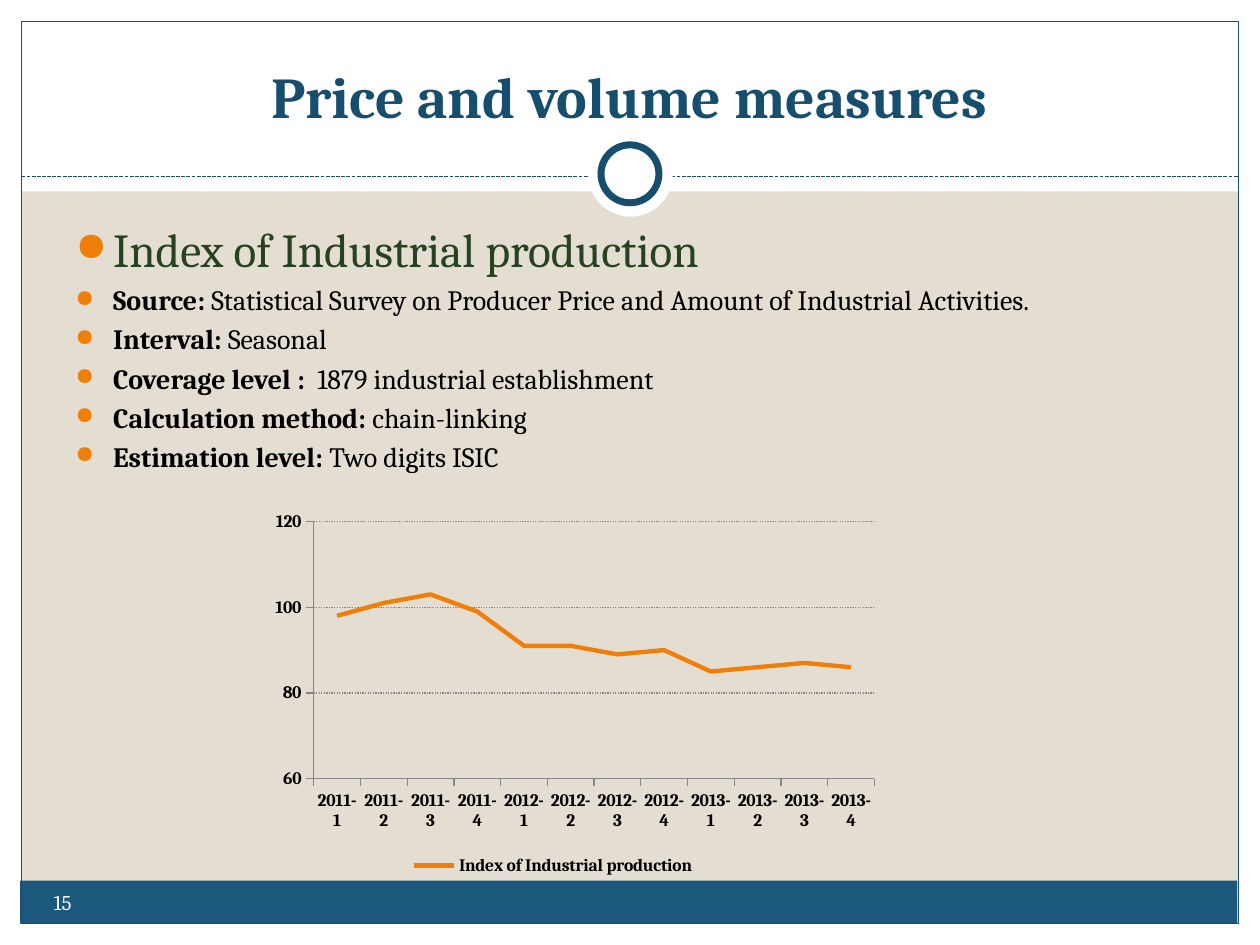
from lxml import etree
from pptx import Presentation
from pptx.chart.data import CategoryChartData
from pptx.dml.color import RGBColor
from pptx.enum.chart import XL_CHART_TYPE, XL_LEGEND_POSITION, XL_TICK_MARK
from pptx.enum.dml import MSO_LINE
from pptx.enum.shapes import MSO_CONNECTOR, MSO_SHAPE
from pptx.enum.text import MSO_ANCHOR, PP_ALIGN
from pptx.oxml import parse_xml
from pptx.oxml.ns import nsdecls, qn
from pptx.util import Inches, Pt

COLORS = {
    "sand": "E3DED1", "white": "FFFFFF", "navy": "184E6D", "footer": "1B587C",
    "orange": "F07F09", "green": "274221", "black": "000000", "grey": "868686",
}
FONT = "Cambria"


def rgb(name):
    return RGBColor.from_string(COLORS[name])


class SlideBuilder:
    def __init__(self, slide):
        self.slide = slide
        fill = slide.background.fill
        fill.solid()
        fill.fore_color.rgb = rgb("sand")

    def style_font(self, font, size, color, bold=False):
        font.name, font.size, font.bold = FONT, Pt(size), bold
        font.color.rgb = rgb(color)

    def style_line(self, line, color, width, dash=None):
        line.color.rgb = rgb(color)
        line.width = Pt(width)
        if dash:
            line.dash_style = dash

    def shape(self, kind, box, fill=None, line=None, width=0.75):
        shape = self.slide.shapes.add_shape(kind, *map(Inches, box))
        shape.shadow.inherit = False
        if fill:
            shape.fill.solid()
            shape.fill.fore_color.rgb = rgb(fill)
        else:
            shape.fill.background()
        if line:
            self.style_line(shape.line, line, width)
        else:
            shape.line.fill.background()

    def rule(self, left, right, y):
        rule = self.slide.shapes.add_connector(
            MSO_CONNECTOR.STRAIGHT, Inches(left), Inches(y), Inches(right), Inches(y))
        self.style_line(rule.line, "navy", 0.75, MSO_LINE.SQUARE_DOT)
        etree.SubElement(rule._element.spPr, qn("a:effectLst"))

    def text_frame(self, box, anchor=MSO_ANCHOR.TOP):
        frame = self.slide.shapes.add_textbox(*map(Inches, box)).text_frame
        frame.word_wrap = True
        frame.vertical_anchor = anchor
        return frame

    def text(self, box, words, size, color, bold=False,
             align=PP_ALIGN.LEFT, anchor=MSO_ANCHOR.TOP):
        paragraph = self.text_frame(box, anchor).paragraphs[0]
        paragraph.text, paragraph.alignment = words, align
        self.style_font(paragraph.font, size, color, bold)

    def bullet(self, paragraph, size, color, words, label=""):
        paragraph.space_before = Pt(0.2 * size)
        self.style_font(paragraph.font, size, color)
        if label:
            paragraph.add_run().text = label
            paragraph.runs[0].font.bold = True
        paragraph.add_run().text = words
        props = paragraph._p.get_or_add_pPr()
        props.set("marL", str(Inches(0.3)))
        props.set("indent", str(Inches(-0.3)))
        marks = (
            f'<a:buClr {nsdecls("a")}><a:srgbClr val="{COLORS["orange"]}"/></a:buClr>',
            f'<a:buSzPct {nsdecls("a")} val="85000"/>',
            f'<a:buChar {nsdecls("a")} char="●"/>',
        )
        default_font = props.find(qn("a:defRPr"))
        for mark in marks:
            default_font.addprevious(parse_xml(mark))

    def place(self, parent, box, inner=False):
        """Set a manual chart layout, given as fractions of the chart."""
        for old in parent.findall(qn("c:layout")):
            parent.remove(old)
        target = '<c:layoutTarget val="inner"/>' if inner else ""
        modes = '<c:xMode val="edge"/><c:yMode val="edge"/>'
        sizes = "".join(f'<c:{key} val="{value}"/>' for key, value in zip("xywh", box))
        layout = parse_xml(f'<c:layout {nsdecls("c")}><c:manualLayout>{target}{modes}'
                           f'{sizes}</c:manualLayout></c:layout>')
        parent.insert(0 if inner else 1, layout)

    def line_chart(self, box, name, categories, values):
        data = CategoryChartData()
        data.categories = categories
        data.add_series(name, values)
        chart = self.slide.shapes.add_chart(
            XL_CHART_TYPE.LINE, *map(Inches, box), data).chart
        self.style_font(chart.font, 10, "black", True)
        chart.has_title = False
        chart.has_legend = True
        chart.legend.position = XL_LEGEND_POSITION.BOTTOM
        chart.legend.include_in_layout = False
        self.place(chart.legend._element, (0.23, 0.92, 0.46, 0.08))
        self.place(chart._chartSpace.chart.plotArea, (0.08, 0.05, 0.89, 0.68), True)

        chart.plots[0].vary_by_categories = False
        series = chart.plots[0].series[0]
        series.smooth = False
        self.style_line(series.format.line, "orange", 2.5)

        for axis in (chart.category_axis, chart.value_axis):
            axis.major_tick_mark = XL_TICK_MARK.OUTSIDE
            self.style_line(axis.format.line, "grey", 0.75)
        value_axis = chart.value_axis
        value_axis.minimum_scale, value_axis.maximum_scale = 60, 120
        value_axis.major_unit = 20
        self.style_line(value_axis.major_gridlines.format.line, "grey", 0.75,
                        MSO_LINE.ROUND_DOT)


def main():
    deck = Presentation()
    deck.slide_width, deck.slide_height = Inches(10), Inches(7.5)
    builder = SlideBuilder(deck.slides.add_slide(deck.slide_layouts[6]))

    # White margins, footer band and frame
    margins = [(0, 7.33, 10, 0.17), (0, 0, 10, 1.52),
               (0, 0, 0.17, 7.5), (9.83, 0, 0.17, 7.5)]
    for margin in margins:
        builder.shape(MSO_SHAPE.RECTANGLE, margin, "white")
    builder.shape(MSO_SHAPE.RECTANGLE, (0.16, 6.99, 9.66, 0.34), "footer")
    builder.shape(MSO_SHAPE.RECTANGLE, (0.17, 0.17, 9.66, 7.16), line="navy")

    # Dashed rule with the ring on it
    builder.rule(0.17, 9.83, 1.4)
    builder.shape(MSO_SHAPE.OVAL, (4.67, 1.05, 0.67, 0.67), "white")
    builder.shape(MSO_SHAPE.OVAL, (4.77, 1.15, 0.46, 0.46), "white", "navy", 4)

    # Title
    builder.text((0.33, 0.25, 9.33, 0.83), "Price and volume measures", 33, "navy",
                 True, PP_ALIGN.CENTER, MSO_ANCHOR.BOTTOM)

    # Bulleted facts
    facts = [
        ("Source: ", "Statistical Survey on Producer Price and Amount of "
                     "Industrial Activities."),
        ("Interval: ", "Seasonal"),
        ("Coverage level :  ", "1879 industrial establishment"),
        ("Calculation method: ", "chain-linking"),
        ("Estimation level: ", "Two digits ISIC"),
    ]
    index_name = "Index of Industrial production"
    body = builder.text_frame((0.5, 1.7, 9, 5.56))
    builder.bullet(body.paragraphs[0], 27, "green", index_name)
    for label, words in facts:
        builder.bullet(body.add_paragraph(), 16, "black", words, label)

    # Slide number
    builder.text((0.33, 7.01, 3.92, 0.4), "15", 12, "white")

    # Quarterly index
    quarters = [f"{year}-{quarter}" for year in (2011, 2012, 2013)
                for quarter in range(1, 5)]
    index_values = [98, 101, 103, 99, 91, 91, 89, 90, 85, 86, 87, 86]
    builder.line_chart((2.09, 3.99, 5, 3), index_name, quarters, index_values)

    deck.save("out.pptx")


if __name__ == "__main__":
    main()
